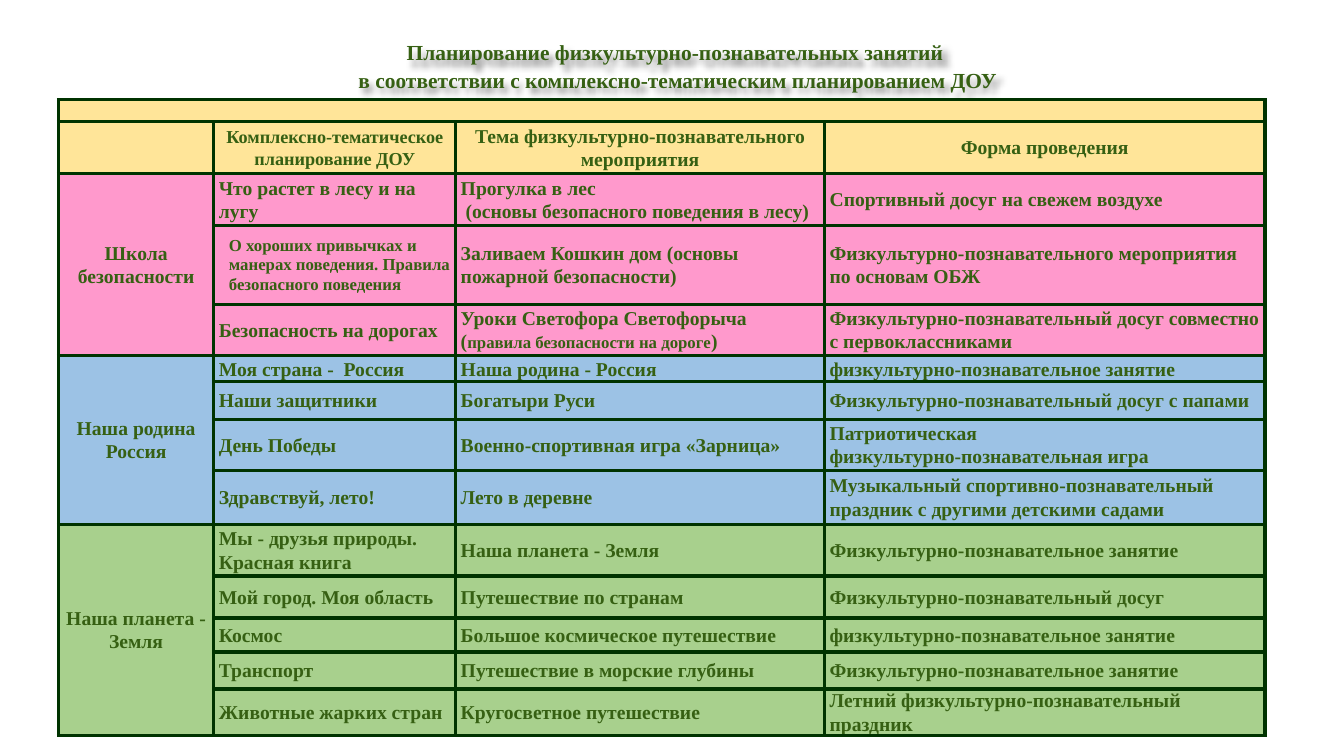
from lxml import etree
from pptx import Presentation
from pptx.dml.color import RGBColor
from pptx.enum.text import MSO_ANCHOR, MSO_AUTO_SIZE, PP_ALIGN
from pptx.oxml.ns import qn
from pptx.util import Pt

CENTER, LEFT = PP_ALIGN.CENTER, PP_ALIGN.LEFT
MIDDLE, BOTTOM = MSO_ANCHOR.MIDDLE, MSO_ANCHOR.BOTTOM
NO_AUTOFIT = MSO_AUTO_SIZE.NONE
TITLE_ONLY = 5
FONT, INK, BORDER, HEADER_FILL = "Times New Roman", "366013", "003300", "FFE599"

COLUMN_WIDTHS = [110.9, 172.8, 263.5, 314.6]
ROW_HEIGHTS = [15.7, 36.8, 37.1, 56.4, 36.8, 18.6, 26.8,
               36.4, 38.6, 37.1, 30, 24.3, 26.4, 32.5]
TITLE = ("Планирование физкультурно-познавательных занятий \v"
         "в соответствии с комплексно-тематическим планированием ДОУ")
HEADINGS = ["", "Комплексно-тематическое планирование ДОУ",
            "Тема физкультурно-познавательного мероприятия", "Форма проведения"]
HABITS = "О хороших привычках и манерах поведения. Правила безопасного поведения"
SECTIONS = [
    ("Школа безопасности", "FF99CC", [
        ("Что растет в лесу и на лугу",
         "Прогулка в лес\n (основы безопасного поведения в лесу)",
         "Спортивный досуг на свежем воздухе"),
        (HABITS,
         "Заливаем Кошкин дом (основы пожарной безопасности)",
         "Физкультурно-познавательного мероприятия по основам ОБЖ"),
        ("Безопасность на дорогах",
         "Уроки Светофора Светофорыча\n(|правила безопасности на дороге|)",
         "Физкультурно-познавательный досуг совместно с первоклассниками"),
    ]),
    ("Наша родина Россия", "9CC2E5", [
        ("Моя страна -  Россия", "Наша родина - Россия",
         "физкультурно-познавательное занятие"),
        ("Наши защитники", "Богатыри Руси",
         "Физкультурно-познавательный досуг с папами"),
        ("День Победы", "Военно-спортивная игра «Зарница»",
         "Патриотическая\nфизкультурно-познавательная игра"),
        ("Здравствуй, лето!", "Лето в деревне",
         "Музыкальный спортивно-познавательный праздник с другими детскими садами"),
    ]),
    ("Наша планета - Земля", "A8D08D", [
        ("Мы - друзья природы.\nКрасная книга", "Наша планета - Земля",
         "Физкультурно-познавательное занятие"),
        ("Мой город. Моя область", "Путешествие по странам",
         "Физкультурно-познавательный досуг"),
        ("Космос", "Большое космическое путешествие",
         "физкультурно-познавательное занятие"),
        ("Транспорт", "Путешествие в морские глубины",
         "Физкультурно-познавательное занятие"),
        ("Животные жарких стран", "Кругосветное путешествие",
         "Летний физкультурно-познавательный праздник"),
    ]),
]


def color(value):
    """Turn a hex string into a colour."""
    return RGBColor.from_string(value)


def style_paragraph(para, size, align):
    """Set the alignment, spacing and font of a paragraph."""
    para.alignment = align
    para.line_spacing = 1.07
    para.font.name = FONT
    para.font.size = Pt(size)
    para.font.bold = True
    para.font.color.rgb = color(INK)


def add_text_shadow(shape):
    """Cast a soft shadow from the text of an unfilled shape."""
    effects = etree.SubElement(shape._element.spPr, qn("a:effectLst"))
    shadow = etree.SubElement(effects, qn("a:outerShdw"), blurRad=str(Pt(4)),
                              dist=str(Pt(4)), dir="2700000", algn="tl", rotWithShape="0")
    black = etree.SubElement(shadow, qn("a:srgbClr"), val="000000")
    etree.SubElement(black, qn("a:alpha"), val="40000")


def fill_title(title):
    """Place and write the slide title."""
    title.left, title.top, title.width, title.height = Pt(51.8), Pt(25.2), Pt(856.1), Pt(44.6)
    frame = title.text_frame
    frame.auto_size = NO_AUTOFIT
    frame.word_wrap = True
    frame.vertical_anchor = BOTTOM
    para = frame.paragraphs[0]
    para.text = TITLE
    para._p.get_or_add_pPr().set("marL", str(Pt(8.6)))
    style_paragraph(para, 15.3, CENTER)
    add_text_shadow(title)


def draw_borders(cell):
    """Draw a line on each side of a cell."""
    properties = cell._tc.get_or_add_tcPr()
    for position, side in enumerate(("lnL", "lnR", "lnT", "lnB")):
        line = etree.Element(qn(f"a:{side}"), w=str(Pt(2.5)))
        fill = etree.SubElement(line, qn("a:solidFill"))
        etree.SubElement(fill, qn("a:srgbClr"), val=BORDER)
        properties.insert(position, line)


def write_cell(cell, text, align, size=14, indent=0):
    """Write lines into a cell, with text between bars set smaller."""
    for number, line in enumerate(text.split("\n")):
        frame = cell.text_frame
        para = frame.add_paragraph() if number else frame.paragraphs[0]
        if indent:
            para._p.get_or_add_pPr().set("marL", str(Pt(indent)))
        style_paragraph(para, size, align)
        for part, words in enumerate(line.split("|")):
            span = para.add_run()
            span.text = words
            if part % 2:
                span.font.size = Pt(12)


def prepare_cell(cell, fill):
    """Set the fill, margins, anchor and borders of a cell."""
    cell.fill.solid()
    cell.fill.fore_color.rgb = color(fill)
    cell.margin_left = cell.margin_right = Pt(3.6)
    cell.margin_top = cell.margin_bottom = Pt(0)
    cell.vertical_anchor = MIDDLE
    draw_borders(cell)


def shrink_empty_cells(table):
    """Keep cells without text from stretching their rows."""
    for cell in table.iter_cells():
        if not cell.text_frame.text:
            para = cell.text_frame.paragraphs[0]
            etree.SubElement(para._p, qn("a:endParaRPr"), sz="800")


def add_section(table, top, name, fill, plans):
    """Fill the rows of one section and merge its name cell."""
    for row, plan in enumerate(plans, top):
        for column in range(len(COLUMN_WIDTHS)):
            prepare_cell(table.cell(row, column), fill)
        for column, text in enumerate(plan, 1):
            size, indent = (12, 7.2) if text == HABITS else (14, 0)
            write_cell(table.cell(row, column), text, LEFT, size, indent)
    table.cell(top, 0).merge(table.cell(top + len(plans) - 1, 0))
    write_cell(table.cell(top, 0), name, CENTER)


def add_plan_table(page):
    """Build the table of planned lessons."""
    frame = page.shapes.add_table(len(ROW_HEIGHTS), len(COLUMN_WIDTHS), Pt(41.8), Pt(71.3),
                                  Pt(sum(COLUMN_WIDTHS)), Pt(sum(ROW_HEIGHTS)))
    table = frame.table
    for column, width in zip(table.columns, COLUMN_WIDTHS):
        column.width = Pt(width)
    for row, height in zip(table.rows, ROW_HEIGHTS):
        row.height = Pt(height)
    for column, heading in enumerate(HEADINGS):
        for row in range(2):
            prepare_cell(table.cell(row, column), HEADER_FILL)
        if heading:
            write_cell(table.cell(1, column), heading, CENTER, 13 if column == 1 else 14)
    table.cell(0, 0).merge(table.cell(0, len(HEADINGS) - 1))
    top = 2
    for name, fill, plans in SECTIONS:
        add_section(table, top, name, fill, plans)
        top += len(plans)
    shrink_empty_cells(table)


def main():
    """Build and save the slide."""
    deck = Presentation()
    deck.slide_width, deck.slide_height = Pt(960), Pt(540)
    page = deck.slides.add_slide(deck.slide_layouts[TITLE_ONLY])
    fill_title(page.shapes.title)
    add_plan_table(page)
    deck.save("out.pptx")


if __name__ == "__main__":
    main()
